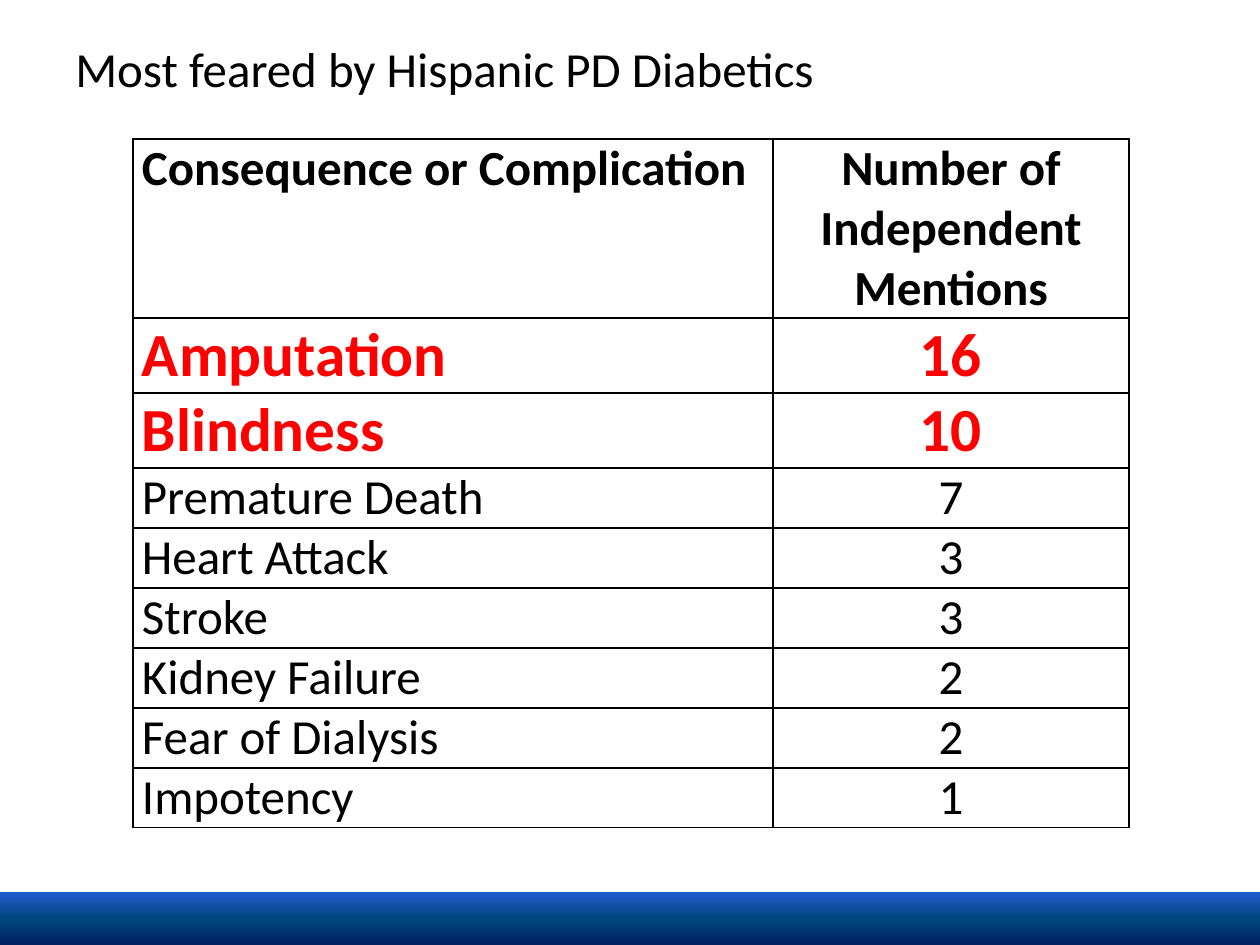
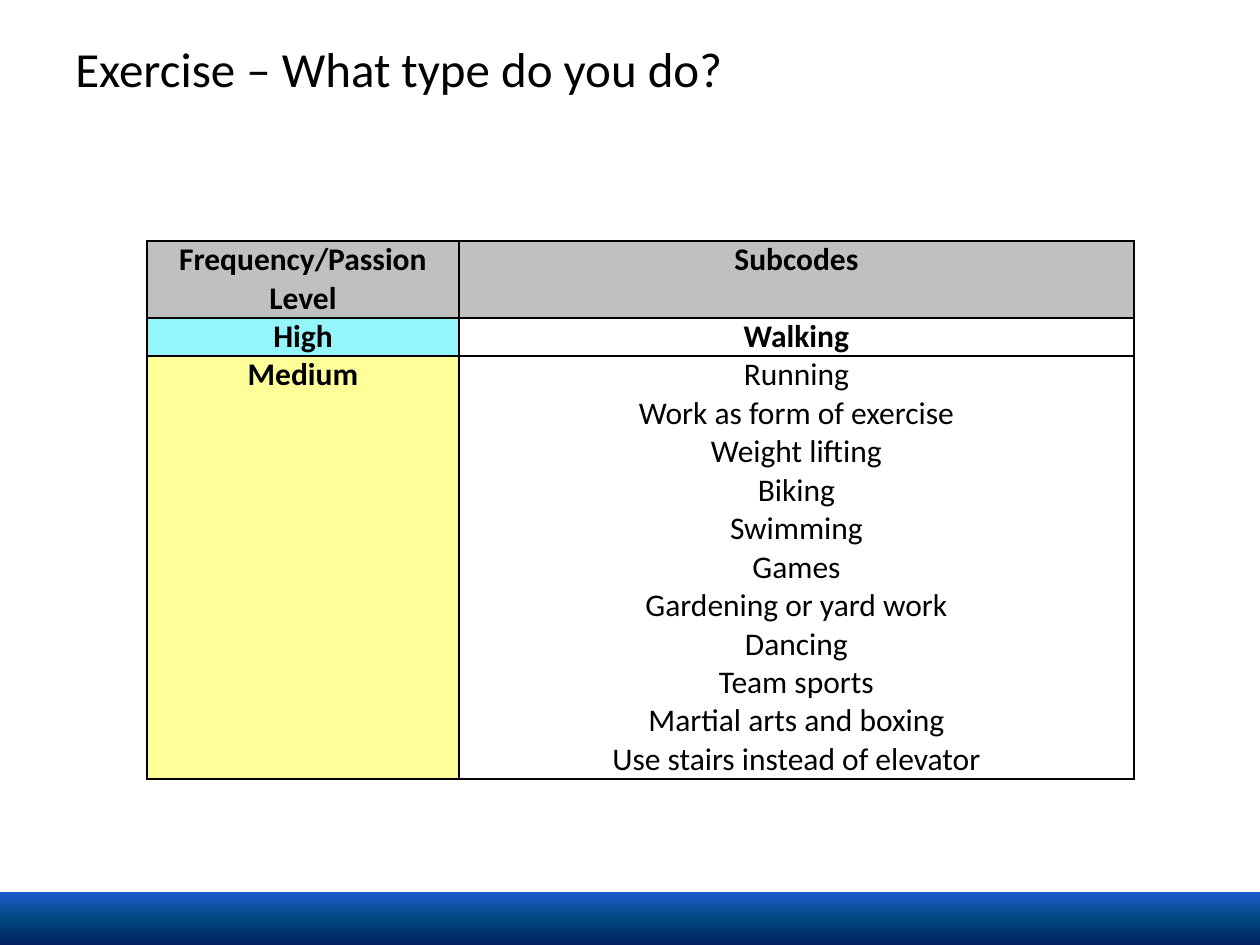
from copy import deepcopy

from lxml.etree import SubElement
from pptx import Presentation
from pptx.dml.color import RGBColor
from pptx.enum.shapes import MSO_SHAPE
from pptx.enum.text import MSO_ANCHOR, PP_ALIGN
from pptx.oxml.ns import qn
from pptx.util import Emu, Pt

FONT = "Calibri"
BLACK, WHITE, RED = "000000", "FFFFFF", "FF0000"
GRAY, CYAN, YELLOW = "C0C0C0", "94F5FA", "FFFF99"
BAND = [(0, "205ACE"), (0.5, "00487E"), (1, "002060")]
WIDE, HIGH = 1260, 945

FEARS = [
    ("Premature Death", "7"),
    ("Heart Attack", "3"),
    ("Stroke", "3"),
    ("Kidney Failure", "2"),
    ("Fear of Dialysis", "2"),
    ("Impotency", "1"),
]
SPORTS = [
    "Running", "Work as form of exercise", "Weight lifting", "Biking",
    "Swimming", "Games", "Gardening or yard work", "Dancing", "Team sports",
    "Martial arts and boxing", "Use stairs instead of elevator",
]


def px(count):
    return Emu(round(count * 914400 / 126))


def color(code):
    return RGBColor.from_string(code)


def write(frame, text, size, ink=BLACK, bold=False, align=PP_ALIGN.LEFT):
    """Fill a text frame, one paragraph per line of text."""
    frame.word_wrap = True
    frame.text = text
    for para in frame.paragraphs:
        para.alignment = align
        font = para.font
        font.name, font.size, font.bold = FONT, Pt(size), bold
        font.color.rgb = color(ink)


def add_band(slide, box):
    band = slide.shapes.add_shape(MSO_SHAPE.RECTANGLE, *map(px, box))
    band.shadow.inherit = False
    band.line.fill.background()
    band.fill.gradient()
    band.fill.gradient_angle = 270
    first = next(band.element.iter(qn("a:gs")))
    first.addnext(deepcopy(first))
    for stop, (place, code) in zip(band.fill.gradient_stops, BAND):
        stop.position = place
        stop.color.rgb = color(code)


def add_title(slide, box, text):
    frame = slide.shapes.add_textbox(*map(px, box)).text_frame
    write(frame, text, 28)
    frame.vertical_anchor = MSO_ANCHOR.MIDDLE


def add_page(deck, title):
    slide = deck.slides.add_slide(deck.slide_layouts[6])
    add_band(slide, (0, 892, WIDE, HIGH - 892))
    add_title(slide, (63, 0, 1134, 136), title)
    return slide


def edge(cell):
    """Draw a thin black border on all four sides of a cell."""
    props = cell._tc.get_or_add_tcPr()
    for side in ("a:lnL", "a:lnR", "a:lnT", "a:lnB"):
        line = SubElement(props, qn(side), w=str(Pt(1)))
        fill = SubElement(line, qn("a:solidFill"))
        SubElement(fill, qn("a:srgbClr"), val=BLACK)


def add_grid(slide, spot, cols, rows):
    """Add a plain bordered table and return it; spot is its left and top."""
    box = (*spot, sum(cols), sum(rows))
    grid = slide.shapes.add_table(len(rows), len(cols), *map(px, box)).table
    grid.first_row = grid.horz_banding = False
    for col, width in zip(grid.columns, cols):
        col.width = px(width)
    for row, height in zip(grid.rows, rows):
        row.height = px(height)
    for cell in grid.iter_cells():
        cell.margin_left = cell.margin_right = px(9)
        cell.margin_top = cell.margin_bottom = 0
        edge(cell)
        cell.fill.background()
    return grid


def add_fears(slide, spot):
    head = ("Consequence or Complication", "Number of Independent Mentions")
    top = [("Amputation", "16"), ("Blindness", "10")]
    looks = [(28, BLACK, True)] + [(35, RED, True)] * len(top)
    looks += [(28, BLACK, False)] * len(FEARS)
    heights = [179] + [75] * len(top) + [60] * len(FEARS)
    grid = add_grid(slide, spot, (640, 356), heights)
    for row, pair, look in zip(grid.rows, [head, *top, *FEARS], looks):
        for cell, text, align in zip(row.cells, pair, (PP_ALIGN.LEFT, PP_ALIGN.CENTER)):
            write(cell.text_frame, text, *look, align)


def add_sports(slide, spot):
    grid = add_grid(slide, spot, (312, 675), (77, 38, 423))
    parts = [
        ("Frequency/Passion Level", GRAY, True), ("Subcodes", GRAY, True),
        ("High", CYAN, True), ("Walking", WHITE, True),
        ("Medium", YELLOW, True), ("\n".join(SPORTS), WHITE, False),
    ]
    for cell, (text, back, bold) in zip(grid.iter_cells(), parts):
        write(cell.text_frame, text, 18, BLACK, bold, PP_ALIGN.CENTER)
        cell.fill.solid()
        cell.fill.fore_color.rgb = color(back)


def main():
    deck = Presentation()
    deck.slide_width, deck.slide_height = px(WIDE), px(HIGH)
    add_fears(add_page(deck, "Most feared by Hispanic PD Diabetics"), (133, 139))
    add_sports(add_page(deck, "Exercise – What type do you do?"), (147, 241))
    deck.save("out.pptx")


if __name__ == "__main__":
    main()
